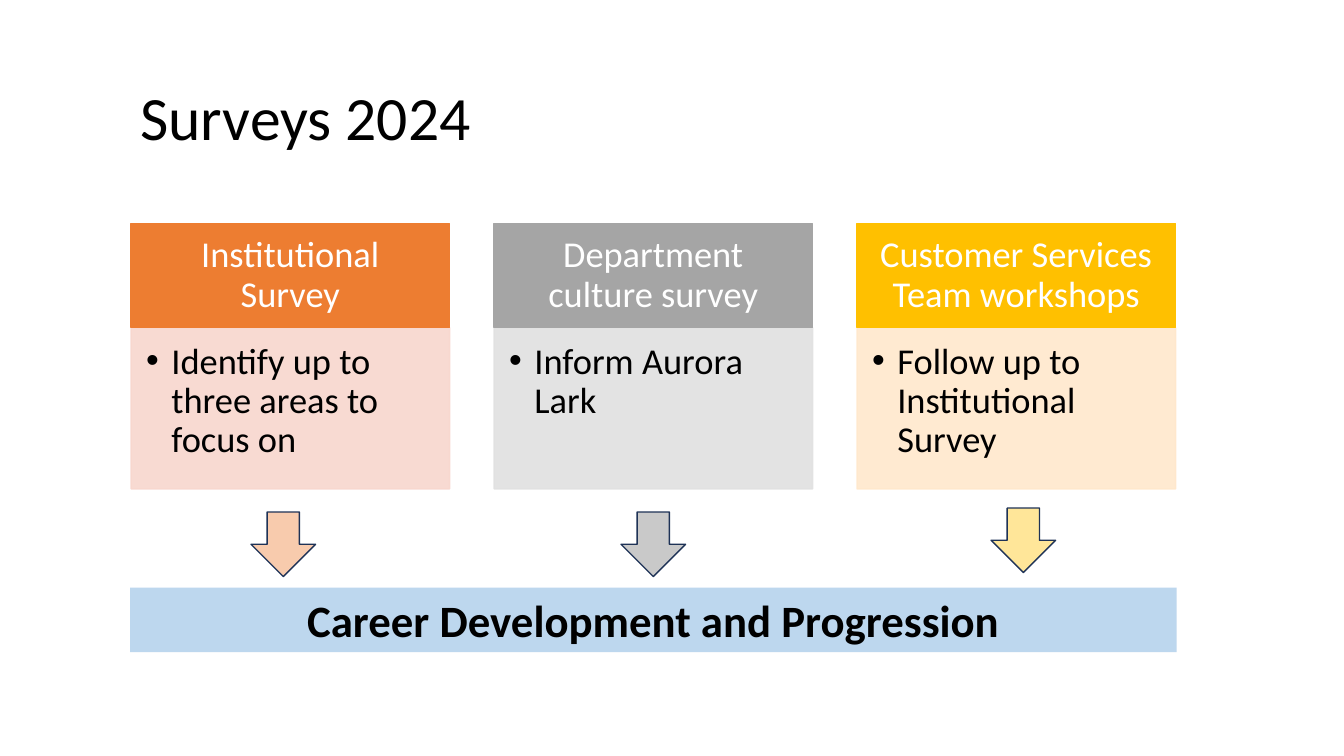
"""Build the Surveys 2024 slide: three survey cards leading to one goal."""
from lxml import etree
from pptx import Presentation, util as u
from pptx.dml import color
from pptx.enum import shapes, text
from pptx.oxml import ns

PX = 9144
FONT = "Calibri"
CARD_LEFT, CARD_STEP, CARD_WIDTH = 130, 360, 316
ARROW_LEFT, ARROW_STEP, ARROW_SIZE = 249, 367, 64
SURVEYS = [
    ("Institutional Survey", "Identify up to three areas to focus on",
     "ED7D31", "F8D7CE", "F8CBAD", 508),
    ("Department culture survey", "Inform Aurora Lark",
     "A5A5A5", "E1E1E1", "C9C9C9", 508),
    ("Customer Services Team workshops", "Follow up to Institutional Survey",
     "FFC000", "FFE8CC", "FFE699", 504),
]


def px(length):
    return u.Emu(length * PX)


def rgb(hex_code):
    return color.RGBColor.from_string(hex_code)


def apply(target, values):
    for name, value in values.items():
        setattr(target, name, value)


def place(item, left, top, width, height):
    apply(item, {"left": px(left), "top": px(top),
                 "width": px(width), "height": px(height)})


def paint(item, fill, line=None):
    item.fill.solid()
    item.fill.fore_color.rgb = rgb(fill)
    if line:
        item.line.color.rgb = rgb(line)
        item.line.width = u.Pt(1)
    else:
        item.line.fill.background()


def write(item, words, size, ink="000000", bold=False, insets=(10, 5, 10, 5),
          anchor=text.MSO_ANCHOR.MIDDLE, align=text.PP_ALIGN.LEFT, spacing=0.9):
    frame = item.text_frame
    frame.text = words
    sides = ("margin_left", "margin_top", "margin_right", "margin_bottom")
    apply(frame, dict(zip(sides, map(px, insets))))
    apply(frame, {"word_wrap": True, "auto_size": text.MSO_AUTO_SIZE.NONE,
                  "vertical_anchor": anchor})
    paragraph = frame.paragraphs[0]
    apply(paragraph, {"alignment": align, "line_spacing": spacing,
                      "space_before": u.Pt(0)})
    font = paragraph.runs[0].font
    apply(font, {"name": FONT, "size": u.Pt(size), "bold": bold})
    font.color.rgb = rgb(ink)
    return paragraph


def add_block(slide, kind, box, fill, line=None):
    block = slide.shapes.add_shape(kind, *map(px, box))
    block.shadow.inherit = False
    paint(block, fill, line)
    return block


def add_bullet(paragraph):
    props = paragraph._p.get_or_add_pPr()
    props.set("marL", str(px(25)))
    props.set("indent", str(px(-25)))
    etree.SubElement(props, ns.qn("a:buFont")).set("typeface", "Arial")
    etree.SubElement(props, ns.qn("a:buChar")).set("char", "•")


def soften(item, percent):
    for tint in item._element.spPr.iter(ns.qn("a:srgbClr")):
        etree.SubElement(tint, ns.qn("a:alpha")).set("val", str(percent * 1000))


def fill_details(details, left, words, tint):
    place(details, left, 325, CARD_WIDTH, 160)
    paint(details, tint, tint)
    soften(details, 90)
    add_bullet(write(details, words, 26, insets=(15, 15, 20, 23),
                     anchor=text.MSO_ANCHOR.TOP))


def add_header(slide, left, words, fill):
    header = add_block(slide, shapes.MSO_SHAPE.RECTANGLE,
                       (left, 222, CARD_WIDTH, 103), fill, fill)
    write(header, words, 26, "FFFFFF", insets=(20, 12, 20, 12),
          align=text.PP_ALIGN.CENTER)


def main():
    deck = Presentation()
    apply(deck, {"slide_width": px(1333), "slide_height": px(750)})
    slide = deck.slides.add_slide(deck.slide_layouts.get_by_name("Comparison"))

    title, *bodies, spare = slide.placeholders
    spare._element.getparent().remove(spare._element)
    place(title, 129, 47, 1150, 145)
    write(title, "Surveys 2024", 44)

    for i, (survey, (name, purpose, strong, tint, arrow, arrow_top)) in enumerate(
            zip(bodies, SURVEYS)):
        left = CARD_LEFT + i * CARD_STEP
        add_header(slide, left, name, strong)
        fill_details(survey, left, purpose, tint)
        add_block(slide, shapes.MSO_SHAPE.DOWN_ARROW,
                  (ARROW_LEFT + i * ARROW_STEP, arrow_top, ARROW_SIZE, ARROW_SIZE),
                  arrow, "1E3256")

    goal = add_block(slide, shapes.MSO_SHAPE.RECTANGLE, (129, 583, 1038, 64), "BDD7EE")
    write(goal, "Career Development and Progression", 32, bold=True,
          align=text.PP_ALIGN.CENTER, spacing=1.0)
    deck.save("out.pptx")


if __name__ == "__main__":
    main()
